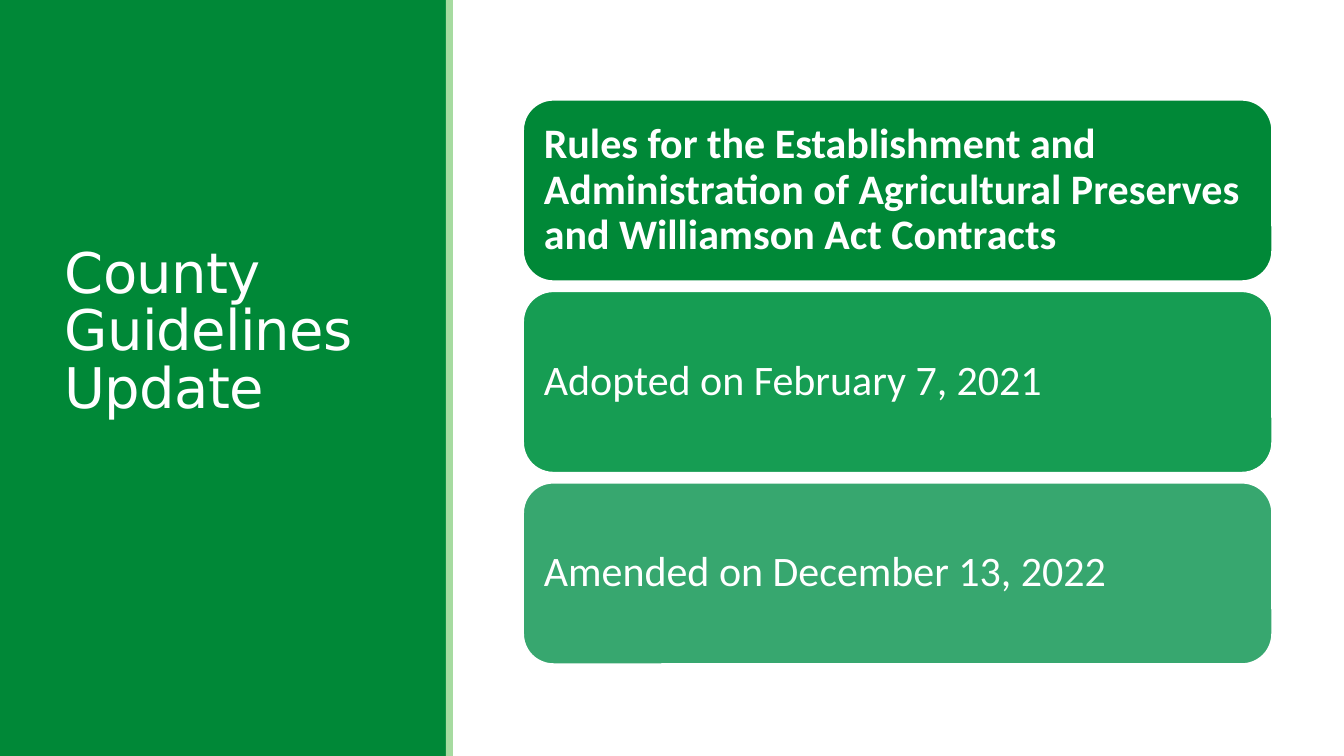
from dataclasses import dataclass

from pptx import Presentation
from pptx.dml.color import RGBColor as RGB
from pptx.enum.shapes import MSO_SHAPE as Shape
from pptx.enum.text import MSO_ANCHOR as Anchor, MSO_AUTO_SIZE as Fit, PP_ALIGN as Align
from pptx.util import Pt

# Content
TITLE = "County Guidelines Update"
CARDS = [  # text, fill, bold
    ("Rules for the Establishment and Administration of Agricultural "
     "Preserves and Williamson Act Contracts", "008837", True),
    ("Adopted on February 7, 2021", "169D53", False),
    ("Amended on December 13, 2022", "37A76F", False),
]


@dataclass(frozen=True)
class Theme:
    green: str = "008837"
    pale: str = "A6DBA0"
    white: str = "FFFFFF"
    head: str = "DejaVu Sans"
    body: str = "Calibri"
    big: int = 40
    text: int = 30


T = Theme()

# Layout, in points
WIDE, HIGH = 960, 540
PANEL, STRIPE = 319, 5
LEFT, TOP = 373.7, 71.3
CARD_W, CARD_H, STEP = 535, 129.6, 136.75


def block(slide, kind, box, fill):
    item = slide.shapes.add_shape(kind, *map(Pt, box))
    item.shadow.inherit = False
    item.fill.solid()
    item.fill.fore_color.rgb = RGB.from_string(fill)
    item.line.fill.background()
    return item


def write(frame, text, font, size, space, bold=False):
    frame.word_wrap = True
    frame.auto_size = Fit.NONE
    frame.vertical_anchor = Anchor.MIDDLE
    para = frame.paragraphs[0]
    para.alignment = Align.LEFT
    para.line_spacing = space
    run = para.add_run()
    run.text = text
    style = para.font
    style.name, style.size, style.bold = font, Pt(size), bold
    style.color.rgb = RGB.from_string(T.white)
    return run


def main():
    deck = Presentation()
    deck.slide_width, deck.slide_height = Pt(WIDE), Pt(HIGH)
    slide = deck.slides.add_slide(deck.slide_layouts[5])
    title = slide.shapes.title

    # Side panel and stripe, behind the title
    for left, width, fill in [(0, PANEL, T.green), (PANEL - 0.5, STRIPE, T.pale)]:
        bar = block(slide, Shape.RECTANGLE, (left, 0, width, HIGH), fill)
        title.element.addprevious(bar.element)

    # Title, raised above the middle by its bottom margin
    title.left, title.top, title.width, title.height = map(Pt, (39, 41, 242.6, 454.3))
    title.text_frame.margin_bottom = Pt(63)
    run = write(title.text_frame, TITLE, T.head, T.big, 0.85)
    run.font._element.set("spc", "-50")

    # Cards
    for i, (text, fill, bold) in enumerate(CARDS):
        box = (LEFT, TOP + i * STEP, CARD_W, CARD_H)
        card = block(slide, Shape.ROUNDED_RECTANGLE, box, fill)
        card.line.color.rgb = RGB.from_string(T.white)
        card.line.width = Pt(1.25)
        frame = card.text_frame
        frame.margin_left = frame.margin_right = Pt(8.5)
        frame.margin_top = frame.margin_bottom = Pt(8.5)
        write(frame, text, T.body, T.text, 0.9, bold)

    deck.save("out.pptx")


if __name__ == "__main__":
    main()
